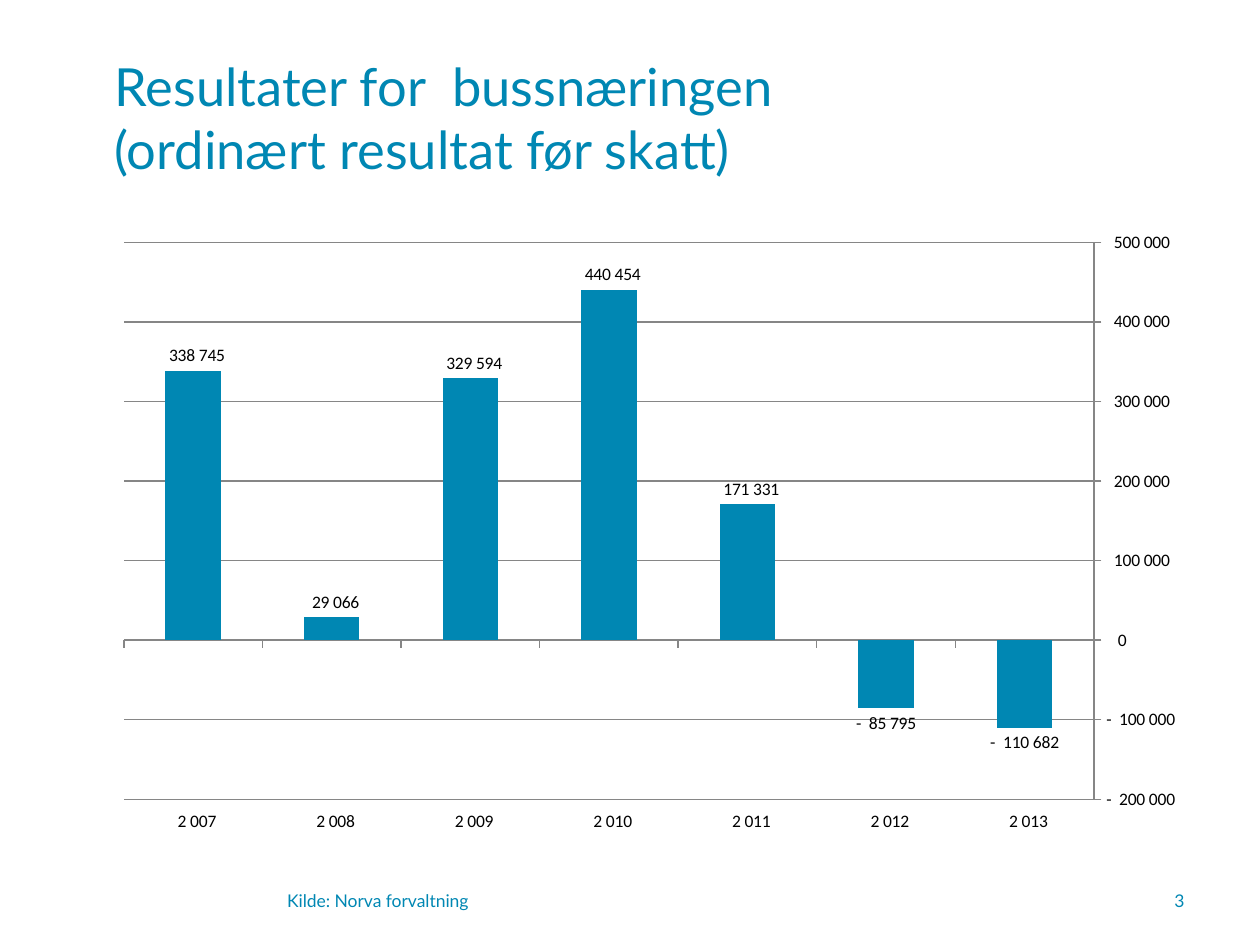
from pptx import Presentation
from pptx.chart.data import CategoryChartData
from pptx.dml.color import RGBColor
from pptx.enum.chart import (XL_CHART_TYPE, XL_LABEL_POSITION,
                             XL_TICK_LABEL_POSITION, XL_TICK_MARK)
from pptx.enum.text import MSO_ANCHOR, PP_ALIGN
from pptx.util import Inches, Pt

COLORS = {"blue": "0087B3", "text": "000000", "line": "868686", "back": "FFFFFF"}
WIDTH, HEIGHT = 10, 7.5
LEFT, SPAN = 0.081, 0.869  # shares of the slide's width
FORMAT = r"_-_ #\ ##0;\-\ \ #\ ##0"
RESULTS = {2013: -110682, 2012: -85795, 2011: 171331, 2010: 440454,
           2009: 329594, 2008: 29066, 2007: 338745}


def rgb(name):
    return RGBColor.from_string(COLORS[name])


def place(box):
    """Turn shares of the slide's size into lengths."""
    x, y, w, h = box
    return [Inches(n) for n in (x * WIDTH, y * HEIGHT, w * WIDTH, h * HEIGHT)]


def add_text(slide, box, text, size, align=PP_ALIGN.LEFT):
    frame = slide.shapes.add_textbox(*place(box)).text_frame
    frame.word_wrap = True
    frame.vertical_anchor = MSO_ANCHOR.MIDDLE
    par = frame.paragraphs[0]
    par.text = text
    par.alignment = align
    par.font.size = Pt(size)
    par.font.name = "Lato"
    par.font.color.rgb = rgb("blue")


def style_axis(axis):
    axis.major_tick_mark = XL_TICK_MARK.OUTSIDE
    axis.minor_tick_mark = XL_TICK_MARK.NONE
    axis.format.line.color.rgb = rgb("line")
    axis.format.line.width = Pt(0.75)


def style_numbers(labels, code):
    labels.number_format = code
    labels.number_format_is_linked = False


def add_results(slide, box):
    data = CategoryChartData(number_format=FORMAT)
    data.categories = list(RESULTS)
    data.categories.number_format = r"_-_ #\ ##0"
    data.add_series("Series 1", list(RESULTS.values()))
    chart = slide.shapes.add_chart(
        XL_CHART_TYPE.COLUMN_CLUSTERED, *place(box), data).chart
    chart.has_legend = False
    chart.has_title = False
    chart.font.size = Pt(10)
    chart.font.name = "Calibri"
    chart.font.color.rgb = rgb("text")

    years, scale = chart.category_axis, chart.value_axis
    for axis in (years, scale):
        style_axis(axis)
    years.reverse_order = True
    years.tick_label_position = XL_TICK_LABEL_POSITION.LOW
    style_numbers(years.tick_labels, r"_-_ #\ ##0")
    scale.minimum_scale, scale.maximum_scale = -200000, 500000
    scale.major_unit = 100000
    style_numbers(scale.tick_labels, FORMAT)
    grid = scale.major_gridlines.format.line
    grid.color.rgb = rgb("line")
    grid.width = Pt(0.75)

    plot = chart.plots[0]
    plot.gap_width = 150
    plot.vary_by_categories = False
    bars = plot.series[0]
    bars.invert_if_negative = False
    bars.format.fill.solid()
    bars.format.fill.fore_color.rgb = rgb("blue")
    labels = bars.data_labels
    labels.show_value = True
    labels.position = XL_LABEL_POSITION.OUTSIDE_END
    style_numbers(labels, FORMAT)


def add_footer(slide, top, high):
    add_text(slide, (0.218, top, 0.341, high), "Kilde: Norva forvaltning", 10)
    add_text(slide, (0.883, top, 0.067, high), "3", 10, PP_ALIGN.RIGHT)


def main():
    deck = Presentation()
    deck.slide_width, deck.slide_height = Inches(WIDTH), Inches(HEIGHT)
    slide = deck.slides.add_slide(deck.slide_layouts[6])
    slide.background.fill.solid()
    slide.background.fill.fore_color.rgb = rgb("back")
    add_text(slide, (LEFT, 0.04, SPAN, 0.167),
             "Resultater for  bussnæringen\v(ordinært resultat før skatt)", 30)
    add_results(slide, (LEFT, 0.233, SPAN, 0.66))
    add_footer(slide, 0.927, 0.053)
    deck.save("out.pptx")


if __name__ == "__main__":
    main()
